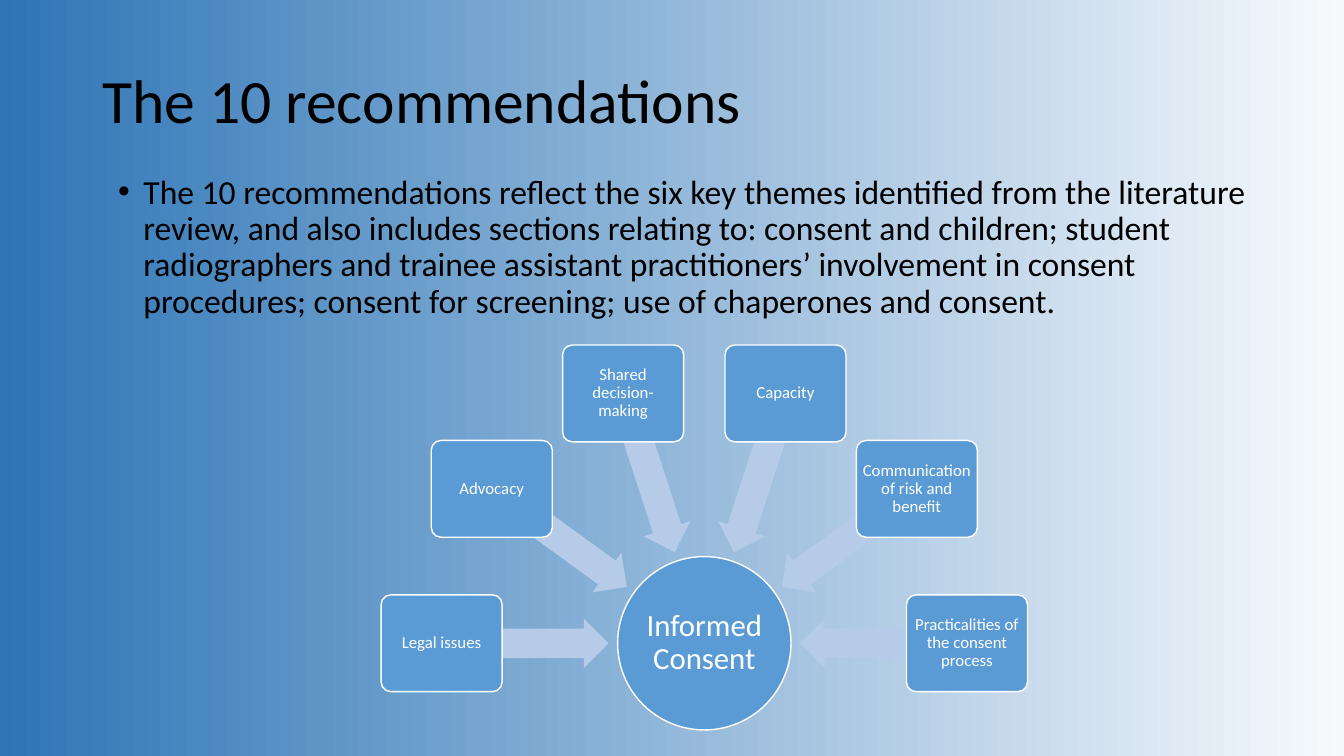
import math
from dataclasses import dataclass

import pptx
import pptx.dml.color
import pptx.enum.shapes
import pptx.enum.text
import pptx.oxml.ns
import pptx.shapes.autoshape
import pptx.slide
import pptx.util
from lxml import etree

Cm = pptx.util.Cm
Pt = pptx.util.Pt
Shapes = pptx.enum.shapes.MSO_SHAPE
Align = pptx.enum.text.PP_ALIGN
Anchor = pptx.enum.text.MSO_ANCHOR

COLOURS = {
    "background right": "F7FAFD",
    "background left": "2E75B6",
    "theme": "5B9BD5",
    "arrow": "B5CBE7",
    "outline": "FFFFFF",
    "label": "FFFFFF",
    "text": "000000",
}
FONT = "Calibri"
HUB_X, HUB_Y = 17.75, 16.21
HUB_SIZE = 4.37
THEME_RADIUS, ARROW_RADIUS = 6.62, 4.51
FIRST_ANGLE, ANGLE_STEP = 180, 36


@dataclass(frozen=True)
class Node:
    kind: pptx.enum.shapes.MSO_SHAPE
    width: float
    height: float
    fill: str
    adjustments: tuple[float, ...] = ()
    outlined: bool = True
    text_size: int = 12
    inset: float = 0.08


HUB = Node(Shapes.OVAL, HUB_SIZE, HUB_SIZE, "theme", text_size=22, inset=0.05)
THEME = Node(Shapes.ROUNDED_RECTANGLE, 3.05, 2.44, "theme", (0.1,))
ARROW = Node(Shapes.LEFT_ARROW, 4.19, 1.24, "arrow", (0.6, 0.5), outlined=False)

THEMES = [
    "Legal issues",
    "Advocacy",
    "Shared decision-making",
    "Capacity",
    "Communication of risk and benefit",
    "Practicalities of the consent process",
]


def colour(name: str) -> pptx.dml.color.RGBColor:
    return pptx.dml.color.RGBColor.from_string(COLOURS[name])


def write(shape: pptx.shapes.autoshape.Shape, text: str, size: int, ink: str,
          alignment: pptx.enum.text.PP_ALIGN) -> None:
    shape.text_frame.text = text
    paragraph = shape.text_frame.paragraphs[0]
    paragraph.alignment = alignment
    paragraph.line_spacing = 0.9
    paragraph.space_before = Pt(0)
    for run in paragraph.runs:
        run.font.name = FONT
        run.font.size = Pt(size)
        run.font.color.rgb = colour(ink)


def draw_node(slide: pptx.slide.Slide, node: Node, radius: float = 0,
              angle: float = 0, label: str = "") -> pptx.shapes.autoshape.Shape:
    centre_x = HUB_X + radius * math.cos(math.radians(angle))
    centre_y = HUB_Y + radius * math.sin(math.radians(angle))
    shape = slide.shapes.add_shape(
        node.kind, Cm(centre_x - node.width / 2), Cm(centre_y - node.height / 2),
        Cm(node.width), Cm(node.height))
    shape.shadow.inherit = False
    for index, value in enumerate(node.adjustments):
        shape.adjustments[index] = value
    shape.fill.solid()
    shape.fill.fore_color.rgb = colour(node.fill)
    if node.outlined:
        shape.line.color.rgb = colour("outline")
        shape.line.width = Pt(1)
    else:
        shape.line.fill.background()
    if label:
        frame = shape.text_frame
        frame.word_wrap = True
        frame.vertical_anchor = Anchor.MIDDLE
        frame.margin_left = frame.margin_right = Cm(node.inset)
        frame.margin_top = frame.margin_bottom = Cm(node.inset)
        write(shape, label, node.text_size, "label", Align.CENTER)
    return shape


def paint_background(slide: pptx.slide.Slide) -> None:
    fill = slide.background.fill
    fill.gradient()
    fill.gradient_angle = 180
    for stop, position, name in zip(
            fill.gradient_stops, (0, 1), ("background right", "background left")):
        stop.position = position
        stop.color.rgb = colour(name)


def place(shape: pptx.shapes.autoshape.Shape, left: float, top: float,
          width: float, height: float) -> None:
    shape.left, shape.top = Cm(left), Cm(top)
    shape.width, shape.height = Cm(width), Cm(height)
    shape.text_frame.auto_size = pptx.enum.text.MSO_AUTO_SIZE.NONE
    shape.text_frame.word_wrap = True


def add_title(slide: pptx.slide.Slide) -> None:
    title = slide.shapes.title
    place(title, 2.33, 1.62, 29.21, 3.68)
    title.text_frame.vertical_anchor = Anchor.MIDDLE
    title.text_frame.margin_bottom = Cm(1.83)
    write(title, "The 10 recommendations", 44, "text", Align.LEFT)


def add_summary(slide: pptx.slide.Slide) -> None:
    summary = slide.placeholders[1]
    place(summary, 2.72, 4.29, 29.31, 12.09)
    summary.text_frame.vertical_anchor = Anchor.TOP
    write(summary,
          "The 10 recommendations reflect the six key themes identified from the "
          "literature review, and also includes sections relating to: consent and "
          "children; student radiographers and trainee assistant practitioners’ "
          "involvement in consent procedures; consent for screening; use of "
          "chaperones and consent.", 24, "text", Align.LEFT)
    properties = summary.text_frame.paragraphs[0]._p.get_or_add_pPr()
    properties.set("marL", str(Cm(0.64)))
    properties.set("indent", str(-Cm(0.64)))
    bullet_font = etree.SubElement(properties, pptx.oxml.ns.qn("a:buFont"))
    bullet_font.set("typeface", "Arial")
    bullet = etree.SubElement(properties, pptx.oxml.ns.qn("a:buChar"))
    bullet.set("char", "•")


def add_consent_diagram(slide: pptx.slide.Slide) -> None:
    draw_node(slide, HUB, label="Informed Consent")
    for index, theme in enumerate(THEMES):
        angle = FIRST_ANGLE + index * ANGLE_STEP
        arrow = draw_node(slide, ARROW, ARROW_RADIUS, angle)
        arrow.rotation = angle % 360
        draw_node(slide, THEME, THEME_RADIUS, angle, theme)


def main() -> None:
    presentation = pptx.Presentation()
    presentation.slide_width = Cm(33.87)
    presentation.slide_height = Cm(19.05)
    slide = presentation.slides.add_slide(presentation.slide_layouts[1])
    paint_background(slide)
    add_title(slide)
    add_summary(slide)
    add_consent_diagram(slide)
    presentation.save("out.pptx")


if __name__ == "__main__":
    main()
